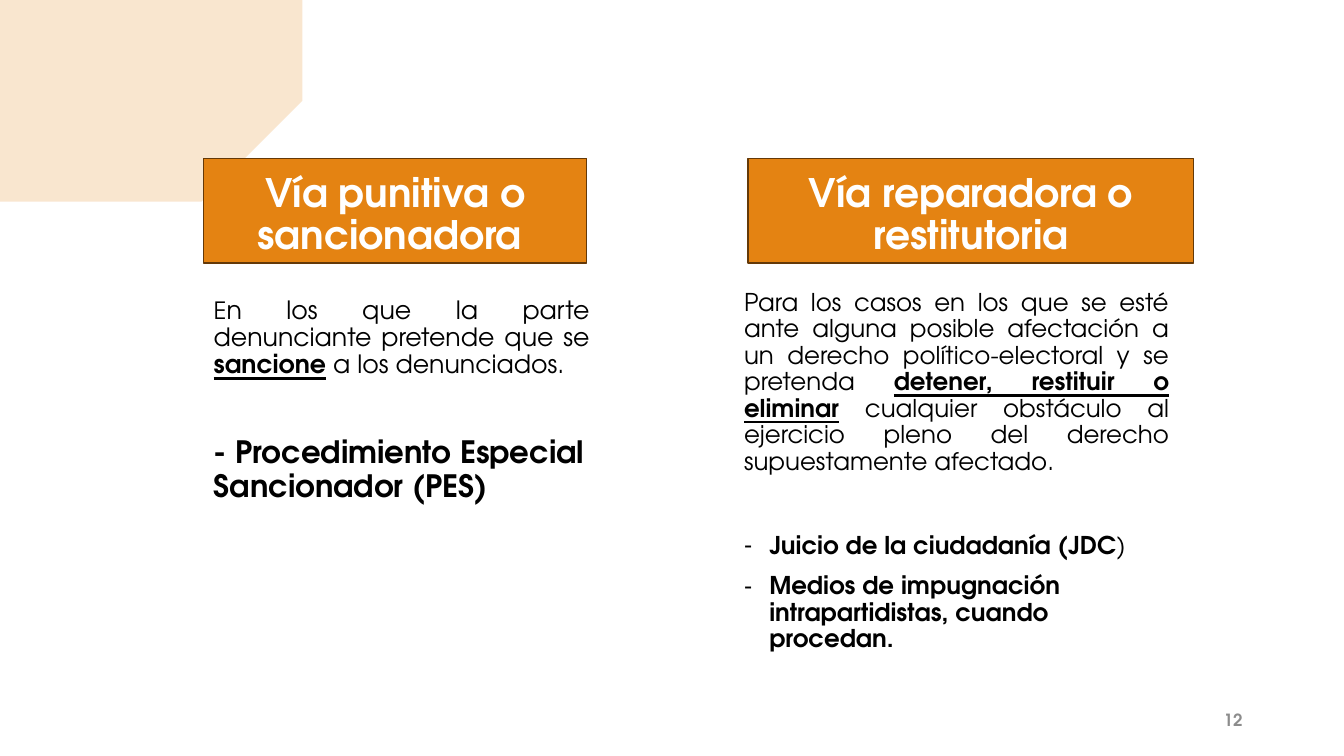
from lxml import etree
from pptx import Presentation
from pptx.dml.color import RGBColor
from pptx.enum.text import MSO_ANCHOR, MSO_AUTO_SIZE, PP_ALIGN
from pptx.oxml.ns import qn
from pptx.util import Inches, Pt

LEFT, CENTER, RIGHT, JUSTIFY = PP_ALIGN.LEFT, PP_ALIGN.CENTER, PP_ALIGN.RIGHT, PP_ALIGN.JUSTIFY
TOP, MIDDLE, BOTTOM = MSO_ANCHOR.TOP, MSO_ANCHOR.MIDDLE, MSO_ANCHOR.BOTTOM

THEME = {
    "font": "TeX Gyre Adventor",
    "orange": RGBColor.from_string("E48312"),
    "brown": RGBColor.from_string("643908"),
    "white": RGBColor.from_string("FFFFFF"),
    "black": RGBColor.from_string("000000"),
    "gray": RGBColor.from_string("8C8C8C"),
    "heading": 28, "lead": 17, "left": 18, "procedure": 22, "right": 17.5, "number": 12,
    "gap": 10, "section_gap": 41.5, "line": 0.9,
}

prs = Presentation()
prs.slide_width, prs.slide_height = Inches(13.33), Inches(7.5)
s = prs.slides.add_slide(prs.slide_layouts[4])
s.shapes.title.element.getparent().remove(s.shapes.title.element)


def place(sp, x, y, w, h, anchor):
    sp.left, sp.width = (int(prs.slide_width * v / 100) for v in (x, w))
    sp.top, sp.height = (int(prs.slide_height * v / 100) for v in (y, h))
    tf = sp.text_frame
    for name, value in {"word_wrap": True, "auto_size": MSO_AUTO_SIZE.NONE,
                        "vertical_anchor": anchor}.items():
        setattr(tf, name, value)
    return tf


def write(tf, paragraphs, color):
    for i, (align, before, bullet, runs) in enumerate(paragraphs):
        p = tf.add_paragraph() if i else tf.paragraphs[0]
        for name, value in {"alignment": align, "space_before": Pt(before),
                            "line_spacing": THEME["line"]}.items():
            setattr(p, name, value)
        pPr = p._p.get_or_add_pPr()
        indent = Inches(0.25) if bullet else 0
        pPr.set("marL", str(indent))
        pPr.set("indent", str(-indent))
        if bullet:
            etree.SubElement(pPr, qn("a:buChar")).set("char", bullet)
        else:
            etree.SubElement(pPr, qn("a:buNone"))
        for text, size, bold, underline in runs:
            r = p.add_run()
            r.text = text
            for name, value in {"name": THEME["font"], "size": Pt(THEME[size]),
                                "bold": bold, "underline": underline}.items():
                setattr(r.font, name, value)
            r.font.color.rgb = THEME[color]


BRUSH = [
    (0, 0.34), (0.06, 0.35), (0.25, 0.37), (0.66, 0.38), (1.02, 0.37), (1.51, 0.38),
    (1.94, 0.41), (2.48, 0.41), (2.68, 0.41), (2.8, 0.47), (2.71, 0.49), (2.55, 0.54),
    (2.53, 0.57), (2.56, 0.59), (2.62, 0.62), (2.48, 0.62), (2.38, 0.66), (2.46, 0.68),
    (2.56, 0.7), (2.66, 0.71), (2.75, 0.74), (2.51, 0.75), (2.63, 0.78), (2.73, 0.81),
    (2.8, 0.82), (2.88, 0.83), (2.9, 0.85), (2.87, 0.88), (2.84, 0.88), (2.63, 0.88),
    (2.95, 0.92), (3.3, 0.94), (3.21, 0.97), (3.22, 1.03), (3.18, 1.06), (3.07, 1.11),
    (3, 1.13), (2.83, 1.16), (2.8, 1.2), (2.78, 1.25), (2.74, 1.28), (3.08, 1.28),
    (2.69, 1.38), (2.73, 1.42), (2.52, 1.48), (2.63, 1.48), (2.4, 1.58), (1.97, 1.72),
    (1.5, 1.81), (1.02, 1.88), (0.65, 1.91), (0.23, 1.9), (0.07, 1.89), (0, 1.88),
]
builder = s.shapes.build_freeform(*BRUSH[0], scale=Inches(1))
builder.add_line_segments(BRUSH[1:], close=True)
brush = builder.convert_to_shape()
brush.shadow.inherit = False
brush.fill.solid()
brush.fill.fore_color.rgb = THEME["orange"]
brush.line.fill.background()
tint = brush.element.spPr.find(qn("a:solidFill")).find(qn("a:srgbClr"))
etree.SubElement(tint, qn("a:alpha")).set("val", "20000")
s.shapes._spTree.insert(2, brush.element)

HEADINGS = [
    (1, 15.15, 28.51, "Vía punitiva o sancionadora "),
    (3, 55.66, 33.16, "Vía reparadora o restitutoria"),
]
for idx, x, w, text in HEADINGS:
    sp = s.placeholders[idx]
    sp.fill.solid()
    sp.fill.fore_color.rgb = THEME["orange"]
    sp.line.color.rgb = THEME["brown"]
    sp.line.width = Pt(1)
    tf = place(sp, x, 20.93, w, 13.87, BOTTOM)
    write(tf, [(CENTER, 0, None, [(text, "heading", True, False)])], "white")

BODIES = [
    (2, (15.15, 38.67, 29.48, 37.87), [
        (JUSTIFY, 0, None, [
            ("E", "lead", False, False),
            ("n los que la parte denunciante pretende que se ", "left", False, False),
            ("sancione", "left", True, True),
            (" a los denunciados. ", "left", False, False)]),
        (LEFT, THEME["section_gap"], None, [
            ("- Procedimiento Especial Sancionador (PES)", "procedure", True, False)]),
    ]),
    (4, (54.61, 37.73, 33.16, 57.73), [
        (JUSTIFY, 0, None, [
            ("Para los casos en los que se esté ante alguna posible afectación a un derecho "
             "político-electoral y se pretenda ", "right", False, False),
            ("detener, restituir o eliminar", "right", True, True),
            (" cualquier obstáculo al ejercicio pleno del derecho supuestamente afectado.",
             "right", False, False)]),
        (LEFT, THEME["section_gap"], "-", [
            ("Juicio de la ciudadanía (JDC", "right", True, False),
            (")", "right", False, False)]),
        (LEFT, THEME["gap"], "-", [
            ("Medios de impugnación intrapartidistas, cuando procedan.", "right", True, False)]),
    ]),
]
for idx, box, paragraphs in BODIES:
    write(place(s.placeholders[idx], *box, TOP), paragraphs, "black")

number = s.shapes.add_textbox(0, 0, 0, 0)
tf = place(number, 70.67, 92.67, 22.51, 5.33, MIDDLE)
write(tf, [(RIGHT, 0, None, [("12", "number", True, False)])], "gray")

prs.save("out.pptx")
